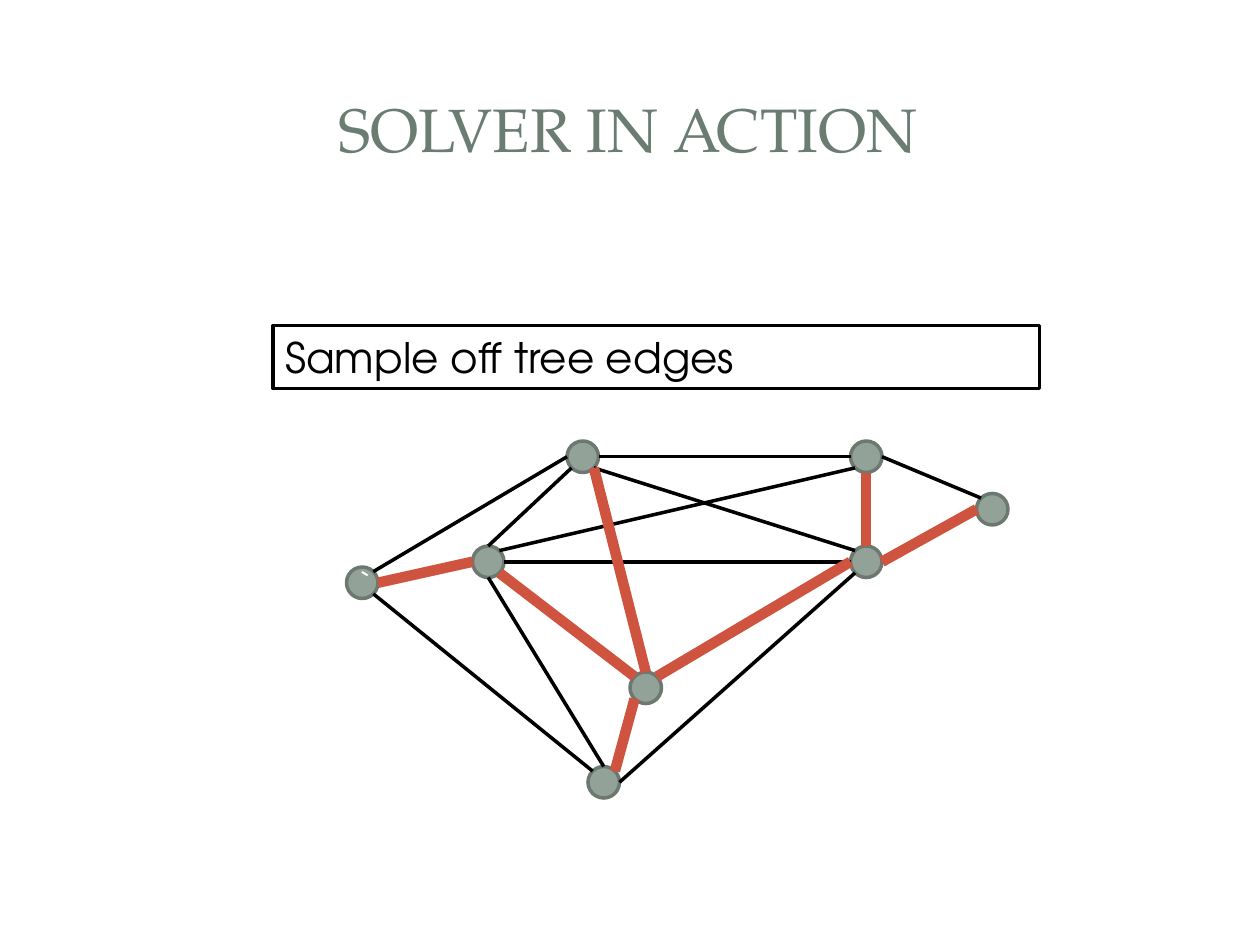
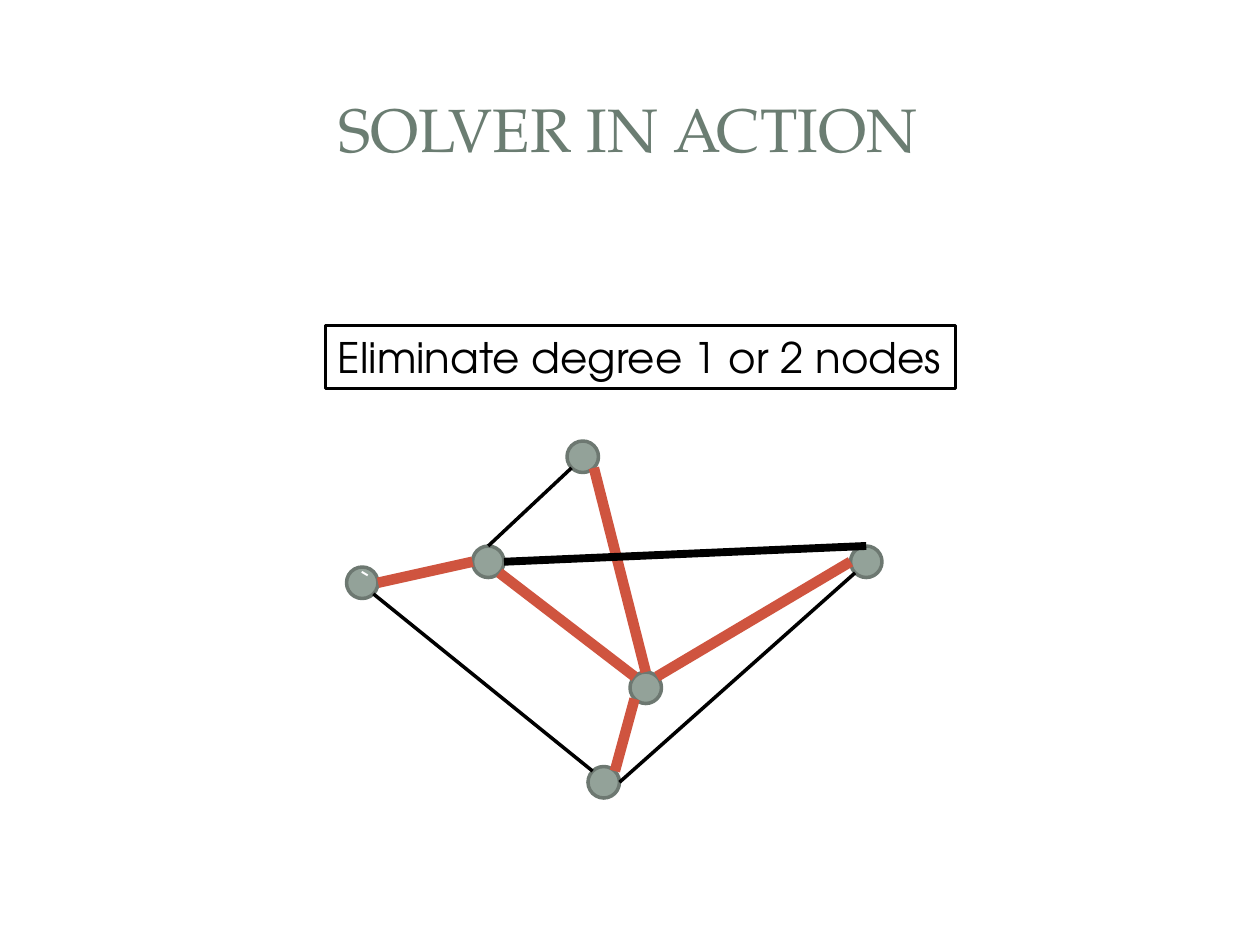
from lxml import etree
from pptx import Presentation
from pptx import util as u
from pptx.dml.color import RGBColor
from pptx.enum import shapes, text
from pptx.oxml.ns import qn

WIDTH, HEIGHT = u.Inches(10), u.Inches(7.5)
CELL = u.Inches(1) / 24  # grid on which captions and graph nodes sit

TITLE_FONT, BODY_FONT = "TeX Gyre Pagella", "TeX Gyre Adventor"
BLACK, WHITE, TITLE_GREEN = "000000", "FFFFFF", "6B7D72"
NODE_FILL, NODE_RIM, TREE_RED = "93A299", "6D7871", "CF543F"
THIN, MERGED, TREE = 2, 4.5, 6

NODE_SIZE = 6
NODES = {  # centre column and row
    "left": (69, 111), "inner": (93, 107), "bottom": (115, 149),
    "hub": (123, 131), "top": (111, 87), "upper right": (165, 87),
    "right": (165, 107), "far right": (189, 97),
}

DIAGONAL = 0.5 ** 0.5
COMPASS = {
    "N": (0, -1), "S": (0, 1), "W": (-1, 0), "E": (1, 0),
    "NW": (-DIAGONAL, -DIAGONAL), "NE": (DIAGONAL, -DIAGONAL),
    "SW": (-DIAGONAL, DIAGONAL), "SE": (DIAGONAL, DIAGONAL),
}

# Each edge: start node, side it leaves, end node, side it enters
KEPT_EDGES = [
    ("left", "SE", "bottom", "NW"),
    ("inner", "N", "top", "SW"),
    ("bottom", "E", "right", "SW"),
]
SAMPLED_AWAY_EDGES = [
    ("left", "NE", "top", "W"),
    ("bottom", "N", "inner", "S"),
    ("inner", "E", "right", "W"),
    ("top", "E", "upper right", "W"),
    ("inner", "NE", "upper right", "SW"),
    ("top", "SE", "right", "NW"),
    ("upper right", "E", "far right", "NW"),
]
CORE_TREE = [
    ("left", "E", "inner", "W"),
    ("inner", "SE", "hub", "NW"),
    ("top", "SE", "hub", "N"),
    ("bottom", "NE", "hub", "SW"),
    ("hub", "NE", "right", "W"),
]
ELIMINATED_TREE = [
    ("right", "N", "upper right", "S"),
    ("right", "E", "far right", "W"),
]
MERGED_EDGE = [("right", "N", "inner", "E")]


def color(hex_code):
    return RGBColor.from_string(hex_code)


def cells(*counts):
    return [u.Emu(round(count * CELL)) for count in counts]


def write(frame, words, font, size, ink, align):
    frame.word_wrap = True
    paragraph = frame.paragraphs[0]
    paragraph.text = words
    paragraph.alignment = align
    paragraph.font.name = font
    paragraph.font.size = u.Pt(size)
    paragraph.font.color.rgb = color(ink)


def add_title(slide, words):
    box = slide.shapes.add_textbox(
        round(WIDTH * 0.047), round(HEIGHT * 0.06),
        round(WIDTH * 0.903), round(HEIGHT * 0.152))
    box.text_frame.vertical_anchor = text.MSO_ANCHOR.MIDDLE
    write(box.text_frame, words, TITLE_FONT, 35, TITLE_GREEN, text.PP_ALIGN.CENTER)


def add_outlined(slide, preset, place, fill, rim):
    shape = slide.shapes.add_shape(preset, *cells(*place))
    shape.shadow.inherit = False
    shape.fill.solid()
    shape.fill.fore_color.rgb = color(fill)
    shape.line.color.rgb = color(rim)
    shape.line.width = u.Pt(THIN)
    return shape


def add_caption(slide, words, column, columns):
    box = add_outlined(slide, shapes.MSO_SHAPE.RECTANGLE,
                       (column, 62, columns, 12), WHITE, BLACK)
    box.text_frame.vertical_anchor = text.MSO_ANCHOR.TOP
    write(box.text_frame, words, BODY_FONT, 24, BLACK, text.PP_ALIGN.LEFT)


def add_node(slide, name):
    column, row = NODES[name]
    place = (column - NODE_SIZE / 2, row - NODE_SIZE / 2, NODE_SIZE, NODE_SIZE)
    node = add_outlined(slide, shapes.MSO_SHAPE.OVAL, place, NODE_FILL, NODE_RIM)
    if name == "left":
        node.text_frame.vertical_anchor = text.MSO_ANCHOR.MIDDLE
        write(node.text_frame, "`", BODY_FONT, 18, WHITE, text.PP_ALIGN.CENTER)


def rim_point(name, side):
    """Return where the given compass side meets a node's rim."""
    (column, row), (across, down) = NODES[name], COMPASS[side]
    return cells(column + across * NODE_SIZE / 2, row + down * NODE_SIZE / 2)


def add_edges(slide, edges, ink, weight):
    for start, leaving, end, entering in edges:
        edge = slide.shapes.add_connector(
            shapes.MSO_CONNECTOR.STRAIGHT,
            *rim_point(start, leaving), *rim_point(end, entering))
        edge.line.color.rgb = color(ink)
        edge.line.width = u.Pt(weight)
        etree.SubElement(edge._element.spPr, qn("a:effectLst"))


def add_graph_slide(deck, caption, nodes, edge_groups):
    """Add a slide from (words, column, columns), node names and (edges, ink, weight)."""
    slide = deck.slides.add_slide(deck.slide_layouts[6])
    add_title(slide, "SOLVER IN ACTION")
    for name in nodes:
        add_node(slide, name)
    for group in edge_groups:
        add_edges(slide, *group)
    add_caption(slide, *caption)


def main():
    deck = Presentation()
    deck.slide_width, deck.slide_height = WIDTH, HEIGHT
    add_graph_slide(
        deck, ("Sample off tree edges", 52, 146), NODES,
        [(KEPT_EDGES + SAMPLED_AWAY_EDGES, BLACK, THIN),
         (CORE_TREE + ELIMINATED_TREE, TREE_RED, TREE)])
    eliminated = {"upper right", "far right"}
    add_graph_slide(
        deck, ("Eliminate degree 1 or 2 nodes", 62, 120),
        [name for name in NODES if name not in eliminated],
        [(KEPT_EDGES, BLACK, THIN), (CORE_TREE, TREE_RED, TREE),
         (MERGED_EDGE, BLACK, MERGED)])
    deck.save("out.pptx")


if __name__ == "__main__":
    main()
